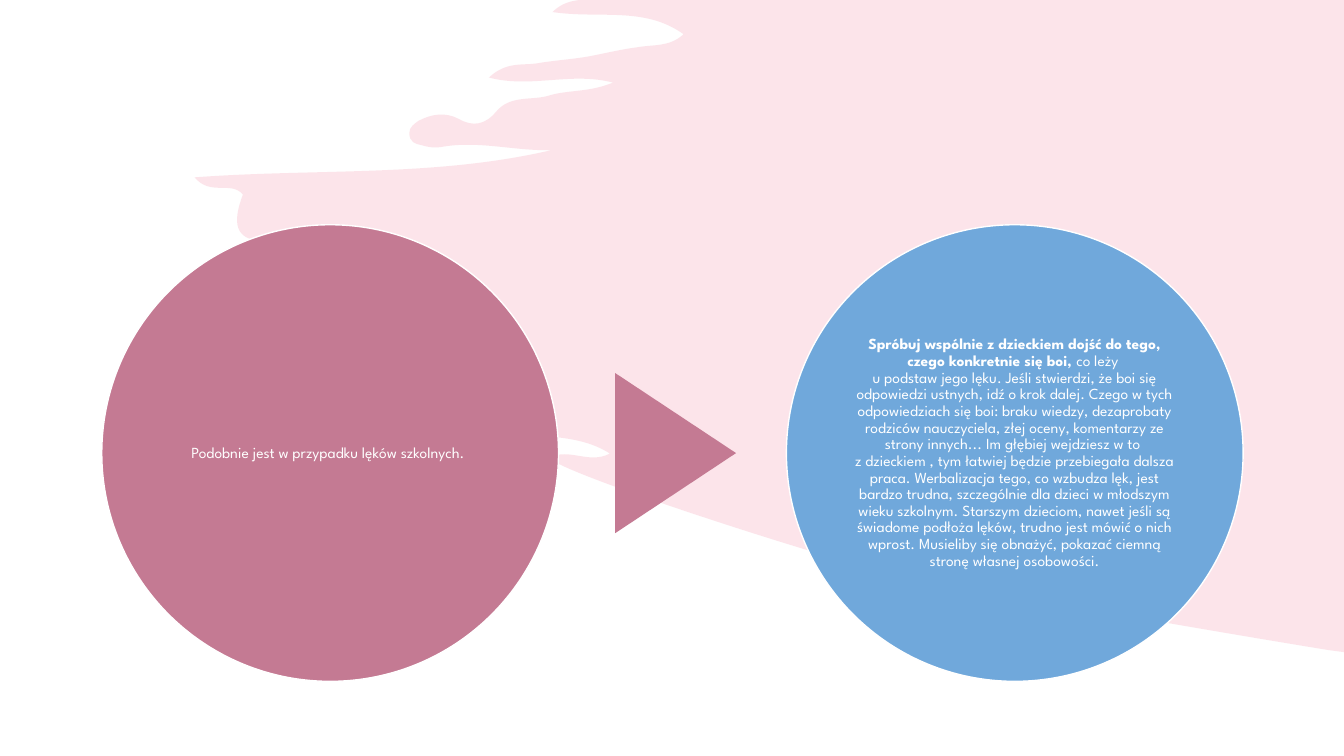
from lxml import etree
from pptx import Presentation
from pptx.dml.color import RGBColor
from pptx.enum.shapes import MSO_SHAPE
from pptx.enum.text import MSO_ANCHOR, PP_ALIGN
from pptx.oxml.ns import qn
from pptx.util import Inches, Pt

WIDE, HIGH = 13.33, 7.5
WHITE = RGBColor(0xFF, 0xFF, 0xFF)
PINK = RGBColor(0xF0, 0x7C, 0x98)
ROSE = RGBColor(0xC4, 0x7A, 0x93)
BLUE = RGBColor(0x70, 0xA8, 0xDB)
OVAL, WEDGE = MSO_SHAPE.OVAL, MSO_SHAPE.ISOSCELES_TRIANGLE
MIDDLE, CENTER = MSO_ANCHOR.MIDDLE, PP_ALIGN.CENTER
FONT, SIZE = "League Spartan", Pt(11)

DISCS = [
    (ROSE, [("Podobnie jest w przypadku lęków szkolnych.\u00a0", False)]),
    (BLUE, [
        ("Spróbuj wspólnie z dzieckiem dojść do tego, czego konkretnie się boi, ", True),
        ("co leży \nu podstaw jego lęku. Jeśli stwierdzi, że boi się odpowiedzi ustnych, "
         "idź o krok dalej. Czego w tych odpowiedziach się boi: braku wiedzy, "
         "dezaprobaty rodziców nauczyciela, złej oceny, komentarzy ze strony innych... "
         "Im głębiej wejdziesz w to\u00a0\nz dzieckiem , tym łatwiej będzie przebiegała "
         "dalsza praca. Werbalizacja tego, co wzbudza lęk, jest bardzo trudna, "
         "szczególnie dla dzieci w młodszym wieku szkolnym. Starszym dzieciom, nawet "
         "jeśli są świadome podłoża lęków, trudno jest mówić o nich wprost. Musieliby "
         "się obnażyć, pokazać ciemną stronę własnej osobowości.", False),
    ]),
]

BRUSH_TOP = (5.75, 0)
BRUSH = [
    (5.67, 0.01, 5.57, 0.03, 5.48, 0.12), (5.95, 0.19, 6.39, 0.06, 6.78, 0.34),
    (6.64, 0.47, 6.48, 0.44, 6.32, 0.47), (6.16, 0.49, 6, 0.53, 5.84, 0.56),
    (5.67, 0.59, 5.49, 0.6, 5.32, 0.63), (5.18, 0.65, 5.02, 0.61, 4.85, 0.77),
    (5.27, 0.88, 5.66, 0.71, 6.08, 0.82), (5.84, 0.92, 5.63, 0.89, 5.44, 0.95),
    (5.27, 1, 5.06, 0.94, 4.92, 1.11), (4.81, 1.24, 4.69, 1.26, 4.55, 1.18),
    (4.42, 1.11, 4.28, 1.13, 4.15, 1.2), (4.11, 1.23, 4.06, 1.26, 4.06, 1.32),
    (4.06, 1.41, 4.12, 1.43, 4.18, 1.44), (4.24, 1.46, 4.31, 1.47, 4.37, 1.46),
    (4.74, 1.39, 5.1, 1.5, 5.47, 1.49), (4.31, 1.76, 3.14, 1.67, 1.93, 1.76),
    (2.09, 1.95, 2.29, 1.79, 2.41, 1.93), (2.3, 2.22, 2.34, 2.37, 2.58, 2.39),
    (2.8, 2.41, 3.04, 2.31, 3.16, 2.65), (3.2, 2.76, 3.41, 2.73, 3.55, 2.75),
    (3.84, 2.79, 4.14, 2.75, 4.42, 2.88), (4.53, 2.93, 4.6, 2.97, 4.55, 3.11),
    (4.49, 3.25, 4.56, 3.3, 4.66, 3.36), (4.73, 3.4, 4.83, 3.39, 4.89, 3.52),
    (4.28, 3.5, 3.69, 3.4, 3.09, 3.5), (3.75, 3.74, 4.47, 3.73, 5.12, 4.02),
    (5.1, 4.12, 4.95, 4.07, 4.94, 4.22), (5.28, 4.38, 5.69, 4.27, 6.05, 4.5),
    (5.84, 4.61, 5.65, 4.44, 5.45, 4.54), (5.52, 4.69, 8.4, 5.61, 8.92, 5.71),
    (9.78, 5.87, 11.95, 6.25, 13.18, 6.45),
]
BRUSH_END = (WIDE, 6.47)

DISC = 4.53
EDGE, TOP = 1.01, 2.23
PITCH = 6.79
BASE, RISE = 1.59, 1.2


def paint(shape, color):
    shape.shadow.inherit = False
    shape.fill.solid()
    shape.fill.fore_color.rgb = color
    shape.line.fill.background()


def bend(shape, curves):
    left, top = shape.left, shape.top
    edges = list(shape._element.spPr.iter(qn("a:lnTo")))[1:]
    for edge, curve in zip(edges, curves):
        edge.tag = qn("a:cubicBezTo")
        edge.remove(edge[0])
        for x, y in zip(curve[::2], curve[1::2]):
            etree.SubElement(edge, qn("a:pt"), x=str(Inches(x) - left),
                             y=str(Inches(y) - top))


def write(shape, parts):
    frame = shape.text_frame
    frame.word_wrap = True
    frame.vertical_anchor = MIDDLE
    frame.margin_left = frame.margin_right = 0
    frame.margin_top = frame.margin_bottom = 0
    para = frame.paragraphs[0]
    para.alignment = CENTER
    para.line_spacing = 0.9
    for text, bold in parts:
        for row, line in enumerate(text.split("\n")):
            if row:
                para.add_line_break()
            run = para.add_run()
            run.text = line
            run.font.name, run.font.size = FONT, SIZE
            run.font.bold = bold
            run.font.color.rgb = WHITE
    for gap in para._p.findall(qn("a:br")):
        etree.SubElement(gap, qn("a:rPr"), sz=str(int(SIZE.pt * 100)))


deck = Presentation()
deck.slide_width, deck.slide_height = Inches(WIDE), Inches(HIGH)
slide = deck.slides.add_slide(deck.slide_layouts[6])
slide.background.fill.solid()
slide.background.fill.fore_color.rgb = WHITE
shapes = slide.shapes

spots = [BRUSH_TOP] + [curve[4:] for curve in BRUSH] + [BRUSH_END]
maker = shapes.build_freeform(Inches(WIDE), 0)
maker.add_line_segments([(Inches(x), Inches(y)) for x, y in spots], close=True)
brush = maker.convert_to_shape()
bend(brush, BRUSH)
paint(brush, PINK)
tint = brush._element.spPr.find(qn("a:solidFill"))[0]
etree.SubElement(tint, qn("a:alpha"), val="20000")

for col, (color, parts) in enumerate(DISCS):
    disc = shapes.add_shape(OVAL, Inches(EDGE + col * PITCH), Inches(TOP),
                            Inches(DISC), Inches(DISC))
    paint(disc, color)
    disc.line.color.rgb = WHITE
    disc.line.width = Pt(1)
    write(disc, parts)

mid = EDGE + (DISC + PITCH) / 2 + 0.03
wedge = shapes.add_shape(WEDGE, Inches(mid - BASE / 2),
                         Inches(TOP + (DISC - RISE) / 2),
                         Inches(BASE), Inches(RISE))
wedge.rotation = 90
paint(wedge, ROSE)

deck.save("out.pptx")
